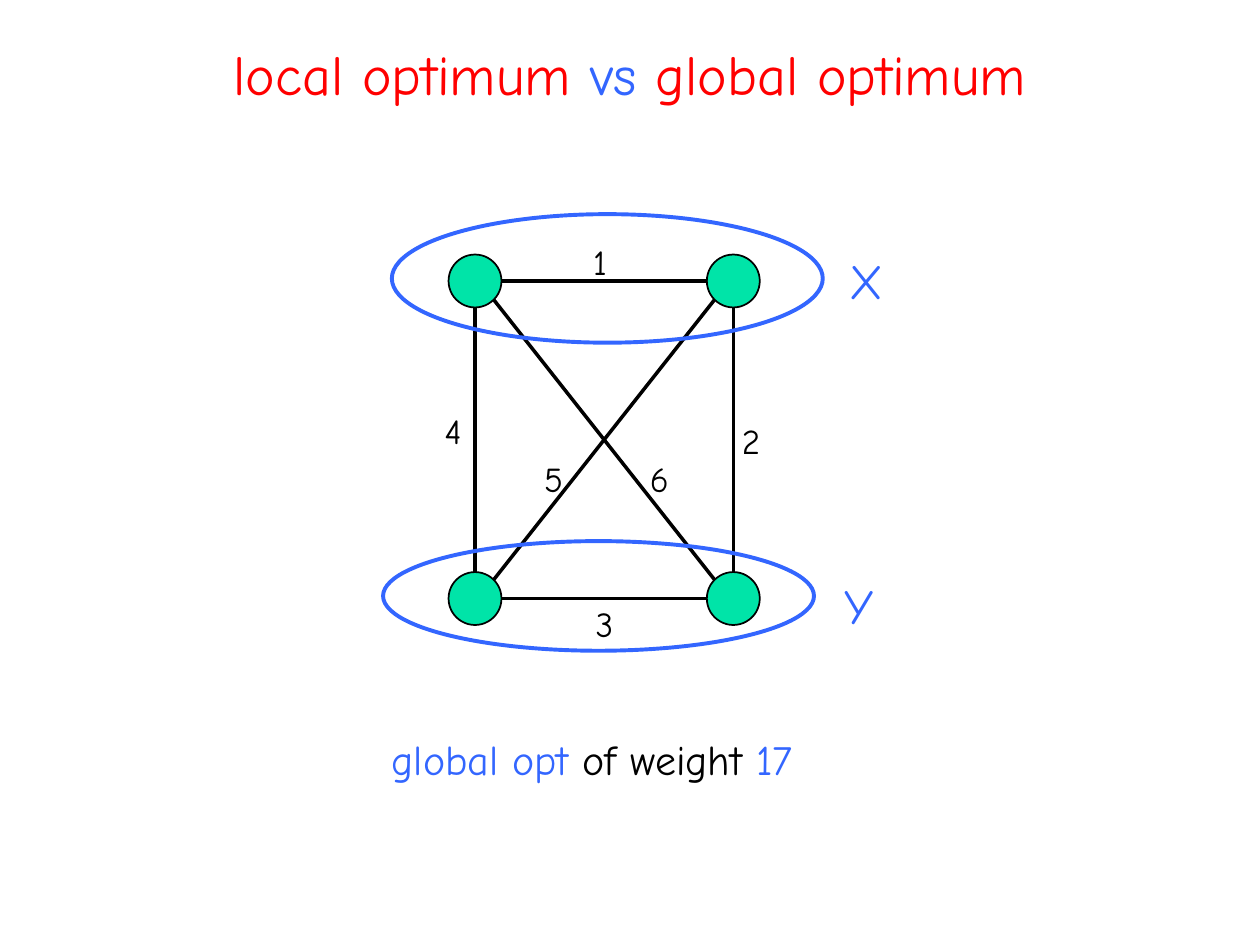
from math import hypot

from lxml import etree
from pptx import Presentation
from pptx.dml.color import RGBColor
from pptx.enum.shapes import MSO_CONNECTOR, MSO_SHAPE
from pptx.enum.text import MSO_ANCHOR, MSO_AUTO_SIZE, PP_ALIGN
from pptx.oxml.ns import qn
from pptx.util import Inches, Pt

OVAL, LINE = MSO_SHAPE.OVAL, MSO_CONNECTOR.STRAIGHT
BOTTOM, CENTER, LEFT = MSO_ANCHOR.BOTTOM, PP_ALIGN.CENTER, PP_ALIGN.LEFT
FIT, FIXED = MSO_AUTO_SIZE.SHAPE_TO_FIT_TEXT, MSO_AUTO_SIZE.NONE

THEME = {
    "font": "Comic Neue",
    "red": "FF0000", "blue": "3366FF", "black": "000000", "green": "00E4A8",
    "title": 32, "set": 28, "note": 24, "weight": 20,
    "rim": 1, "edge": 2, "ring": 2.25,
}

# Content: runs are (text, colour)
TITLE = [("local optimum ", "red"), ("vs", "blue"), (" global optimum", "red")]
NOTE = [("global opt", "blue"), (" of weight ", "black"), ("17", "blue")]

# Graph: nodes are (column, row); edges are (from, to, weight, label box)
COLS, ROWS, SIZE = (3.77, 5.82), (2.23, 4.75), 0.42
NODES = [(c, r) for c in (0, 1) for r in (0, 1)]
EDGES = [
    ((0, 0), (1, 0), "1", (4.61, 1.86, 0.33, 0.44)),
    ((0, 0), (1, 1), "6", (5.06, 3.58, 0.37, 0.44)),
    ((1, 0), (0, 1), "5", (4.22, 3.58, 0.37, 0.44)),
    ((0, 1), (1, 1), "3", (4.63, 4.73, 0.37, 0.44)),
    ((0, 0), (0, 1), "4", (3.43, 3.2, 0.37, 0.44)),
    ((1, 0), (1, 1), "2", (5.79, 3.28, 0.37, 0.44)),
]
# Sets: (name, ring centre and size, label box)
SETS = [
    ("Y", (4.75, 4.73, 3.42, 0.87), (6.6, 4.52, 0.45, 0.57)),
    ("X", (4.82, 2.21, 3.42, 1.02), (6.64, 1.94, 0.49, 0.57)),
]


def color(name):
    return RGBColor.from_string(THEME[name])


def write(runs, box, size, shape=None, align=LEFT, anchor=None, fit=FIT):
    box = [Inches(v) for v in box]
    shape = shape or slide.shapes.add_textbox(*box)
    shape.left, shape.top, shape.width, shape.height = box
    frame = shape.text_frame
    frame.word_wrap = fit == FIXED
    frame.auto_size = fit
    frame.vertical_anchor = anchor
    par = frame.paragraphs[0]
    par.alignment = align
    for text, tint in runs:
        run = par.add_run()
        run.text = text
        run.font.name = THEME["font"]
        run.font.size = Pt(THEME[size])
        run.font.color.rgb = color(tint)


def oval(x, y, w, h, line, width, fill=None):
    box = (x - w / 2, y - h / 2, w, h)
    shape = slide.shapes.add_shape(OVAL, *[Inches(v) for v in box])
    shape.shadow.inherit = False
    shape.line.color.rgb = color(line)
    shape.line.width = Pt(THEME[width])
    if fill:
        shape.fill.solid()
        shape.fill.fore_color.rgb = color(fill)
    else:
        shape.fill.background()


def edge(start, end):
    # Ends sit on the rim, at the nearest of eight compass points
    dx, dy = end[0] - start[0], end[1] - start[1]
    step = SIZE / 2 / hypot(dx, dy)
    x1, y1 = COLS[start[0]] + dx * step, ROWS[start[1]] + dy * step
    x2, y2 = COLS[end[0]] - dx * step, ROWS[end[1]] - dy * step
    line = slide.shapes.add_connector(LINE, *[Inches(v) for v in (x1, y1, x2, y2)])
    line.line.color.rgb = color("black")
    line.line.width = Pt(THEME["edge"])
    etree.SubElement(line._element.spPr, qn("a:effectLst"))


deck = Presentation()
deck.slide_width, deck.slide_height = Inches(10), Inches(7.5)
slide = deck.slides.add_slide(deck.slide_layouts[5])

# Title
write(TITLE, (0, 0.13, 10, 0.77), "title", shape=slide.shapes.title,
      align=CENTER, anchor=BOTTOM, fit=FIXED)

# Graph
for col, row in NODES:
    oval(COLS[col], ROWS[row], SIZE, SIZE, "black", "rim", fill="green")
for start, end, _, _ in EDGES:
    edge(start, end)
for _, _, weight, box in EDGES:
    write([(weight, "black")], box, "weight")

# Sets
for name, ring, box in SETS:
    write([(name, "blue")], box, "set")
    oval(*ring, "blue", "ring")

# Note
write(NOTE, (3.01, 5.77, 3.77, 0.5), "note")

deck.save("out.pptx")
